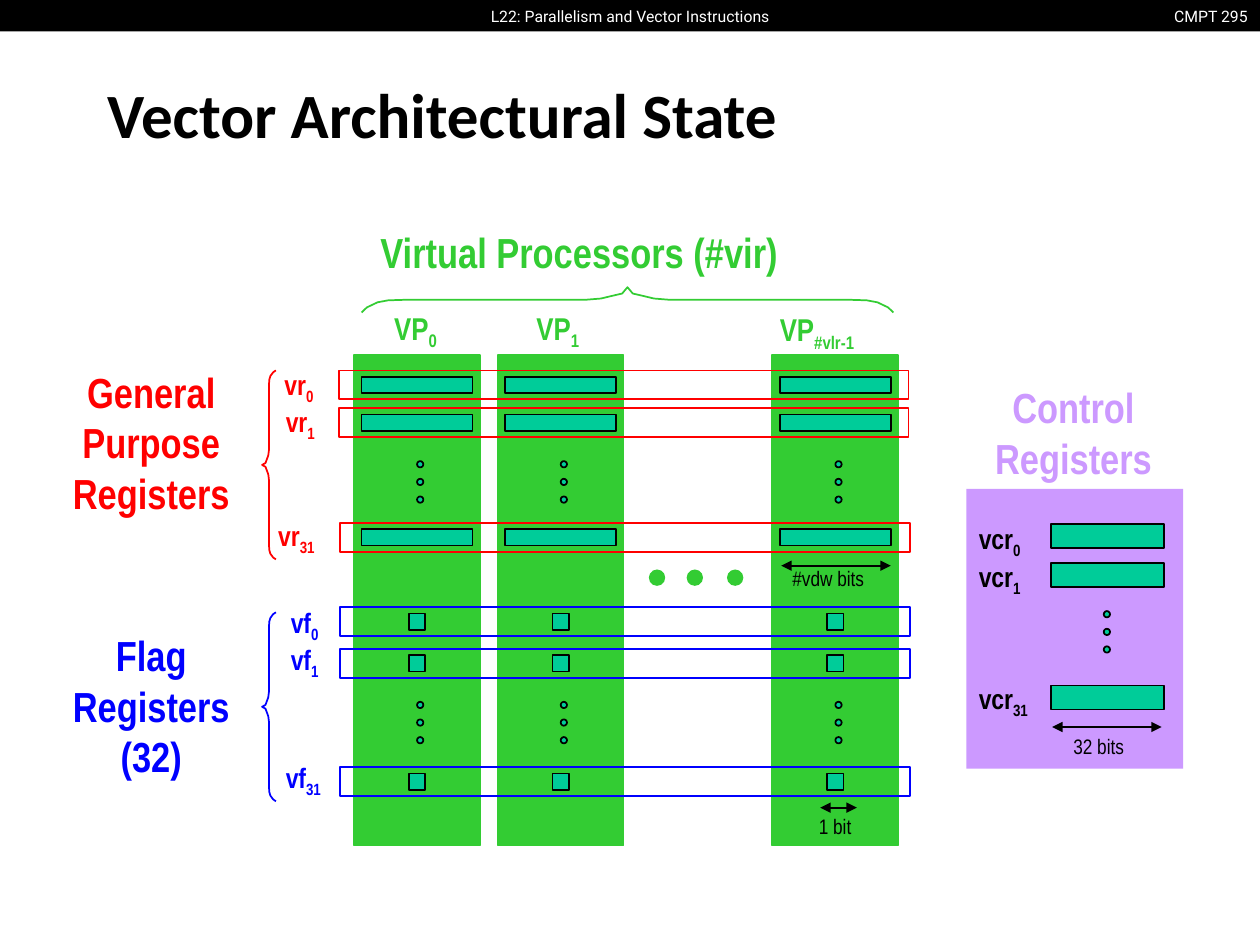
from dataclasses import dataclass
from typing import NamedTuple

from pptx import Presentation
from pptx.dml.color import RGBColor
from pptx.enum.shapes import MSO_CONNECTOR as Connector, MSO_SHAPE as Shape
from pptx.enum.text import MSO_ANCHOR as Anchor, MSO_AUTO_SIZE as AutoSize, PP_ALIGN as Align
from pptx.oxml.ns import qn
from pptx.util import Inches, Pt
from lxml.etree import SubElement

COLUMNS, ROWS = 100, 75
CELL = Inches(10) / COLUMNS
BLACK, WHITE = "000000", "FFFFFF"
GREEN, TEAL, VIOLET = "33CC33", "00CC99", "CC99FF"
RED, BLUE = "FF0000", "0000FF"
NARROW = "Arial Narrow"
LANE_WIDTH, LANE_TOP, LANE_HEIGHT = 10, 28.2, 38.9
DOT, DOT_STEP = 0.5, 1.4
BRACE_HALF = [(0, 1), (0.01, 0.8), (0.03, 0.6), (0.05, 0.52), (0.08, 0.5),
              (0.42, 0.5), (0.45, 0.45), (0.47, 0.35), (0.49, 0.25), (0.5, 0)]
BRACE = BRACE_HALF + [(1 - along, depth) for along, depth in reversed(BRACE_HALF[:-1])]


class Box(NamedTuple):
    column: float
    row: float
    width: float
    height: float

    def emu(self) -> list[int]:
        return [cells(length) for length in self]


@dataclass
class Lane:
    column: float
    subscript: str
    label: Box


@dataclass
class Register:
    index: str
    frame_column: float
    frame_row: float
    label_column: float
    label_row: float


@dataclass
class RegisterFile:
    title: str
    title_box: Box
    prefix: str
    color: str
    brace: Box
    cell_width: float
    dots_row: float
    registers: list[Register]


LANES = [Lane(28.1, "0", Box(30.3, 24, 8.3, 4)),
         Lane(39.5, "1", Box(41.6, 24, 8.3, 4)),
         Lane(61.3, "#vlr-1", Box(60.9, 24.1, 10.8, 4))]
REGISTER_FILES = [
    RegisterFile("General\nPurpose\nRegisters", Box(3.4, 28.6, 17.2, 16.9), "vr", RED,
                 Box(20.8, 29.4, 1.1, 15), 8.8, 36.6,
                 [Register("0", 26.9, 29.4, 21.6, 28.7),
                  Register("1", 26.9, 32.4, 21.7, 31.6),
                  Register("31", 27, 41.5, 21.1, 40.7)]),
    RegisterFile("Flag\nRegisters\n(32)", Box(3.4, 49.5, 17.2, 13), "vf", BLUE,
                 Box(20.8, 48.6, 1.1, 15), 1.3, 55.7,
                 [Register("0", 27, 48.2, 22.1, 47.6),
                  Register("1", 27, 51.5, 22.1, 50.5),
                  Register("31", 27, 60.9, 21.7, 59.9)]),
]
CONTROL_ROWS = [("0", 40.9, 41.6), ("1", 43.9, 44.7), ("31", 53.6, 54.4)]


def cells(length: float) -> int:
    return round(length * CELL)


def rgb(color: str) -> RGBColor:
    return RGBColor.from_string(color)


def paint(shape, fill: str | None = None, line: str | None = None) -> None:
    shape.shadow.inherit = False
    if fill:
        shape.fill.solid()
        shape.fill.fore_color.rgb = rgb(fill)
    else:
        shape.fill.background()
    if line:
        shape.line.color.rgb = rgb(line)
        shape.line.width = Pt(1)
    else:
        shape.line.fill.background()


def draw(slide, box: Box, fill: str | None = None, line: str | None = None,
         kind=Shape.RECTANGLE) -> None:
    paint(slide.shapes.add_shape(kind, *box.emu()), fill, line)


def write(slide, box: Box, text: str, size: float, color: str, bold: bool = False,
          align=Align.LEFT, subscript: str = "", font: str = NARROW):
    frame = slide.shapes.add_textbox(*box.emu()).text_frame
    frame.word_wrap = True
    frame.text = text
    if subscript:
        lowered = frame.paragraphs[0].add_run()
        lowered.text = subscript
        lowered._r.get_or_add_rPr().set("baseline", "-25000")
    for paragraph in frame.paragraphs:
        paragraph.alignment = align
        for run in paragraph.runs:
            run.font.name, run.font.size, run.font.bold = font, Pt(size), bold
            run.font.color.rgb = rgb(color)
    return frame


def write_header(slide, box: Box, text: str, align) -> None:
    frame = write(slide, box, text, 9, WHITE, align=align, font="Roboto")
    frame.word_wrap = False
    frame.vertical_anchor = Anchor.MIDDLE


def draw_dots(slide, column: float, row: float) -> None:
    for step in range(3):
        draw(slide, Box(column, row + step * DOT_STEP, DOT, DOT), TEAL, BLACK, Shape.OVAL)


def draw_brace(slide, box: Box, color: str) -> None:
    upright = box.height > box.width
    shares = [(depth, along) if upright else (along, depth) for along, depth in BRACE]
    points = [(cells(box.column + x * box.width), cells(box.row + y * box.height))
              for x, y in shares]
    builder = slide.shapes.build_freeform(*points[0])
    builder.add_line_segments(points[1:], close=False)
    paint(builder.convert_to_shape(), line=color)


def draw_measure(slide, start: float, end: float, row: float) -> None:
    arrow = slide.shapes.add_connector(Connector.STRAIGHT, cells(start), cells(row),
                                       cells(end), cells(row))
    arrow.line.color.rgb = rgb(BLACK)
    arrow.line.width = Pt(1)
    line = arrow.line._get_or_add_ln()
    for end_tag in ("a:headEnd", "a:tailEnd"):
        SubElement(line, qn(end_tag), type="triangle")
    SubElement(arrow._element.spPr, qn("a:effectLst"))


def draw_title(slide) -> None:
    title = slide.shapes.title
    title.left, title.top, title.width, title.height = Box(7.5, 5.8, 78.3, 6.7).emu()
    frame = title.text_frame
    frame.text = "Vector Architectural State"
    frame.auto_size, frame.vertical_anchor = AutoSize.NONE, Anchor.BOTTOM
    frame.paragraphs[0].alignment = Align.LEFT
    font = frame.paragraphs[0].runs[0].font
    font.name, font.size, font.bold = "Calibri", Pt(36), True
    font.color.rgb = rgb(BLACK)


def draw_lanes(slide) -> None:
    write(slide, Box(29.2, 17.5, 40.5, 5), "Virtual Processors (#vir)", 24, GREEN, True)
    draw_brace(slide, Box(28.7, 22.8, 42.2, 2), GREEN)
    for lane in LANES:
        draw(slide, Box(lane.column, LANE_TOP, LANE_WIDTH, LANE_HEIGHT), GREEN, GREEN)
        write(slide, lane.label, "VP", 18, GREEN, True, subscript=lane.subscript)
    for column in (51.5, 54.5, 57.7):
        draw(slide, Box(column, 45.2, 1.3, 1.3), GREEN, kind=Shape.OVAL)


def draw_register_file(slide, file: RegisterFile) -> None:
    write(slide, file.title_box, file.title, 24, file.color, True, Align.CENTER)
    draw_brace(slide, file.brace, file.color)
    inset = (LANE_WIDTH - file.cell_width) / 2
    for register in file.registers:
        for lane in LANES:
            draw(slide, Box(lane.column + inset, register.frame_row + 0.5,
                            file.cell_width, 1.3), TEAL, BLACK)
        draw(slide, Box(register.frame_column, register.frame_row, 45.2, 2.3), line=file.color)
        write(slide, Box(register.label_column, register.label_row, 7, 3.6), file.prefix,
              16, file.color, True, subscript=register.index)
    for lane in LANES:
        draw_dots(slide, lane.column + LANE_WIDTH / 2, file.dots_row)


def draw_control_registers(slide) -> None:
    write(slide, Box(76.6, 29.8, 17.2, 9), "Control\nRegisters", 24, VIOLET, True, Align.CENTER)
    draw(slide, Box(76.7, 38.8, 17.2, 22.2), VIOLET)
    for index, label_row, bar_row in CONTROL_ROWS:
        write(slide, Box(76.7, label_row, 7, 3.6), "vcr", 16, BLACK, True, subscript=index)
        draw(slide, Box(83.4, bar_row, 9, 1.9), TEAL, BLACK)
    draw_dots(slide, 87.6, 48.5)


def main() -> None:
    deck = Presentation()
    deck.slide_width, deck.slide_height = cells(COLUMNS), cells(ROWS)
    slide = deck.slides.add_slide(deck.slide_layouts[5])
    draw(slide, Box(0, 0, COLUMNS, 2.5), BLACK)
    write_header(slide, Box(91.9, 0, 8.1, 2.5), "CMPT 295", Align.RIGHT)
    write_header(slide, Box(37.8, 0, 24.4, 2.5), "L22: Parallelism and Vector Instructions",
                 Align.CENTER)
    draw_title(slide)
    draw_lanes(slide)
    for file in REGISTER_FILES:
        draw_register_file(slide, file)
    draw_control_registers(slide)
    for start, end, row, label, box in [
            (62, 70.7, 44.9, "#vdw bits", Box(61.9, 44.4, 8.9, 3)),
            (65.1, 68, 64.1, "1 bit", Box(64, 64.1, 5.1, 3)),
            (83.5, 92.2, 57.7, "32 bits", Box(84.2, 57.7, 6.9, 3))]:
        draw_measure(slide, start, end, row)
        write(slide, box, label, 12, BLACK)
    deck.save("out.pptx")


if __name__ == "__main__":
    main()
